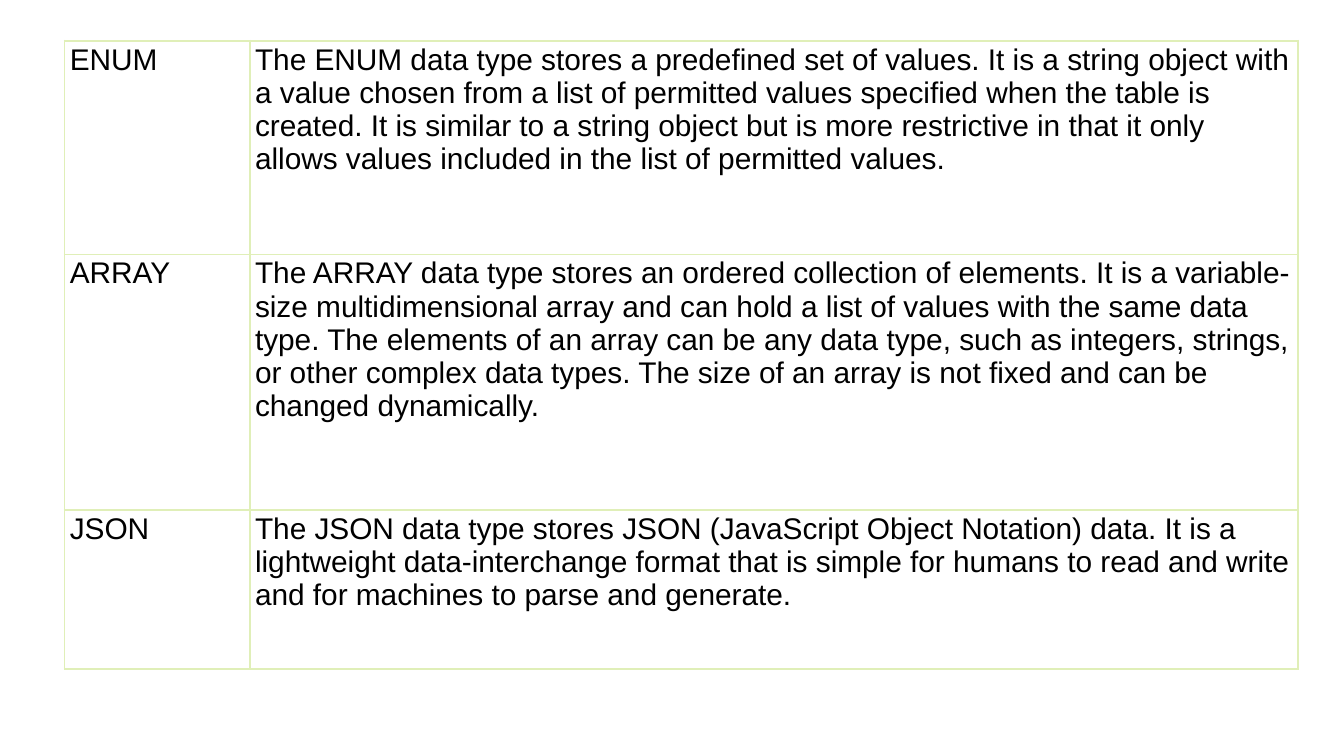
from lxml import etree
from pptx import Presentation
from pptx import util as u
from pptx.dml.color import RGBColor
from pptx.enum import text
from pptx.oxml.ns import qn

DATA_TYPES = [
    ("ENUM",
     "The ENUM data type stores a predefined set of values. It is a string "
     "object with a value chosen from a list of permitted values specified "
     "when the table is created. It is similar to a string object but is more "
     "restrictive in that it only allows values included in the list of "
     "permitted values."),
    ("ARRAY",
     "The ARRAY data type stores an ordered collection of elements. It is a "
     "variable-size multidimensional array and can hold a list of values with "
     "the same data type. The elements of an array can be any data type, such "
     "as integers, strings, or other complex data types. The size of an array "
     "is not fixed and can be changed dynamically."),
    ("JSON",
     "The JSON data type stores JSON (JavaScript Object Notation) data. It is "
     "a lightweight data-interchange format that is simple for humans to read "
     "and write and for machines to parse and generate."),
]
COLUMN_WIDTHS = [3.5, 19.81]
ROW_HEIGHTS = [4.04, 4.83, 3.0]


def color(hex_string):
    return RGBColor.from_string(hex_string)


def write_text(frame, content, size=16, font="Arial", fill="000000"):
    paragraph = frame.paragraphs[0]
    paragraph.alignment = text.PP_ALIGN.LEFT
    run = paragraph.add_run()
    run.text = content
    run.font.size = u.Pt(size)
    run.font.name = font
    run.font.bold = False
    run.font.color.rgb = color(fill)


def set_borders(cell, line_color, width):
    properties = cell._tc.get_or_add_tcPr()
    # Border lines must come before the cell fill
    for index, side in enumerate(("lnL", "lnR", "lnT", "lnB")):
        line = etree.Element(qn(f"a:{side}"), w=str(u.Pt(width)))
        fill = etree.SubElement(line, qn("a:solidFill"))
        etree.SubElement(fill, qn("a:srgbClr"), val=line_color)
        properties.insert(index, line)


def format_cell(cell):
    cell.margin_left = cell.margin_right = u.Cm(0.1)
    cell.margin_top = cell.margin_bottom = u.Cm(0.05)
    cell.vertical_anchor = text.MSO_ANCHOR.TOP
    cell.fill.solid()
    cell.fill.fore_color.rgb = color("FFFFFF")
    set_borders(cell, "E0EFB8", 1)


def add_type_table(slide, left, top):
    table = slide.shapes.add_table(
        len(DATA_TYPES), len(COLUMN_WIDTHS), u.Cm(left), u.Cm(top),
        u.Cm(sum(COLUMN_WIDTHS)), u.Cm(sum(ROW_HEIGHTS))).table
    table.first_row = table.horz_banding = False
    for column, width in zip(table.columns, COLUMN_WIDTHS):
        column.width = u.Cm(width)
    for row, height, contents in zip(table.rows, ROW_HEIGHTS, DATA_TYPES):
        row.height = u.Cm(height)
        for cell, content in zip(row.cells, contents):
            format_cell(cell)
            write_text(cell.text_frame, content)


def main():
    presentation = Presentation()
    presentation.slide_width = u.Cm(25.4)
    presentation.slide_height = u.Cm(14.29)
    slide = presentation.slides.add_slide(presentation.slide_layouts[6])

    # Data types and their descriptions
    add_type_table(slide, left=1.22, top=0.77)

    presentation.save("out.pptx")


if __name__ == "__main__":
    main()
